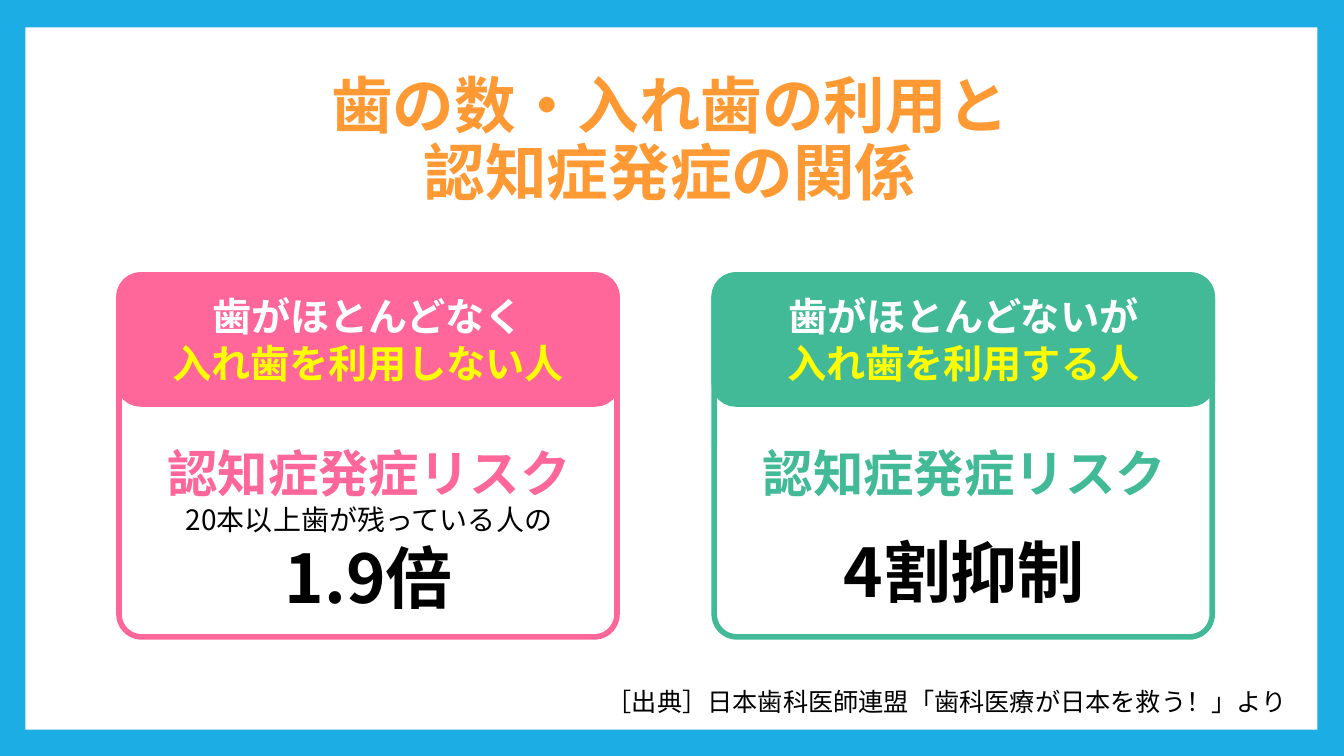
from lxml import etree
from pptx import Presentation
from pptx.dml.color import RGBColor
from pptx.enum.shapes import MSO_SHAPE as Preset
from pptx.enum.text import MSO_ANCHOR as Anchor, PP_ALIGN as Align
from pptx.oxml.ns import qn
from pptx.util import Cm, Pt

FONT = "Noto Sans CJK JP"
BLUE, WHITE, BLACK = "1CADE4", "FFFFFF", "000000"
ORANGE, PINK, GREEN, YELLOW = "FF9933", "FF6699", "42BA97", "FFFF00"


def color(value):
    return RGBColor.from_string(value)


def line(text, **style):
    return text, style


class RiskSlide:
    """Draws the elements of one slide in a shared style."""

    def __init__(self, presentation):
        self.slide = presentation.slides.add_slide(presentation.slide_layouts[6])
        background = self.slide.background.fill
        background.solid()
        background.fore_color.rgb = color(BLUE)

    def set_lines(self, frame, lines, anchor=Anchor.TOP, align=Align.CENTER):
        frame.word_wrap = True
        frame.vertical_anchor = anchor
        for index, (text, style) in enumerate(lines):
            paragraph = frame.add_paragraph() if index else frame.paragraphs[0]
            self.fill_paragraph(paragraph, text, align, **style)

    def fill_paragraph(self, paragraph, text, align, size, ink=BLACK, bold=True,
                       spacing=None, before=None):
        paragraph.text = text
        paragraph.alignment = align
        if spacing:
            paragraph.line_spacing = spacing
        if before:
            paragraph.space_before = Pt(before)
        for run in paragraph.runs:
            run.font.name = FONT
            run.font.size = Pt(size)
            run.font.bold = bold
            run.font.color.rgb = color(ink)
            properties = run._r.get_or_add_rPr()
            etree.SubElement(properties, qn("a:ea")).set("typeface", FONT)

    def text(self, left, top, width, height, lines, **layout):
        box = self.slide.shapes.add_textbox(Cm(left), Cm(top), Cm(width), Cm(height))
        self.set_lines(box.text_frame, lines, **layout)

    def box(self, preset, left, top, width, height, fill=None, border=None, rounding=None):
        shape = self.slide.shapes.add_shape(preset, Cm(left), Cm(top), Cm(width), Cm(height))
        shape.shadow.inherit = False
        if rounding:
            shape.adjustments[0] = rounding
        if fill:
            shape.fill.solid()
            shape.fill.fore_color.rgb = color(fill)
        else:
            shape.fill.background()
        if border:
            shape.line.color.rgb = color(border)
            shape.line.width = Pt(4)
        else:
            shape.line.fill.background()
        return shape

    def card(self, left, accent, heading, body):
        top, width = 6.93, 12.55
        self.box(Preset.ROUNDED_RECTANGLE, left, top, width, 9.12, border=accent, rounding=0.063)
        header = self.box(Preset.ROUNDED_RECTANGLE, left, top, width, 3.25, accent, accent)
        inks = (WHITE, YELLOW)
        self.set_lines(header.text_frame,
                       [line(text, size=28, ink=ink) for text, ink in zip(heading, inks)],
                       anchor=Anchor.MIDDLE)
        risk = line("認知症発症リスク", size=36, ink=accent)
        self.text(left + 0.6, 11.02, 11.4, 4.65, [risk, *body])


def main():
    presentation = Presentation()
    presentation.slide_width, presentation.slide_height = Cm(33.87), Cm(19.05)
    slide = RiskSlide(presentation)
    slide.box(Preset.RECTANGLE, 0.64, 0.69, 32.56, 17.7, WHITE)
    slide.text(3.18, 1.7, 27.43, 3.76,
               [line("歯の数・入れ歯の利用と\v認知症発症の関係", size=44, ink=ORANGE, spacing=0.9)],
               anchor=Anchor.MIDDLE)
    slide.card(3, PINK, ("歯がほとんどなく", "入れ歯を利用しない人"),
               [line("20本以上歯が残っている人の", size=20, bold=False),
                line("1.9倍", size=48)])
    slide.card(18, GREEN, ("歯がほとんどないが", "入れ歯を利用する人"),
               [line("4割抑制", size=48, before=20)])
    slide.text(15.04, 16.89, 17.98, 1.57,
               [line("［出典］日本歯科医師連盟「歯科医療が日本を救う！」より", size=18, bold=False)],
               anchor=Anchor.MIDDLE, align=Align.LEFT)
    presentation.save("out.pptx")


if __name__ == "__main__":
    main()
